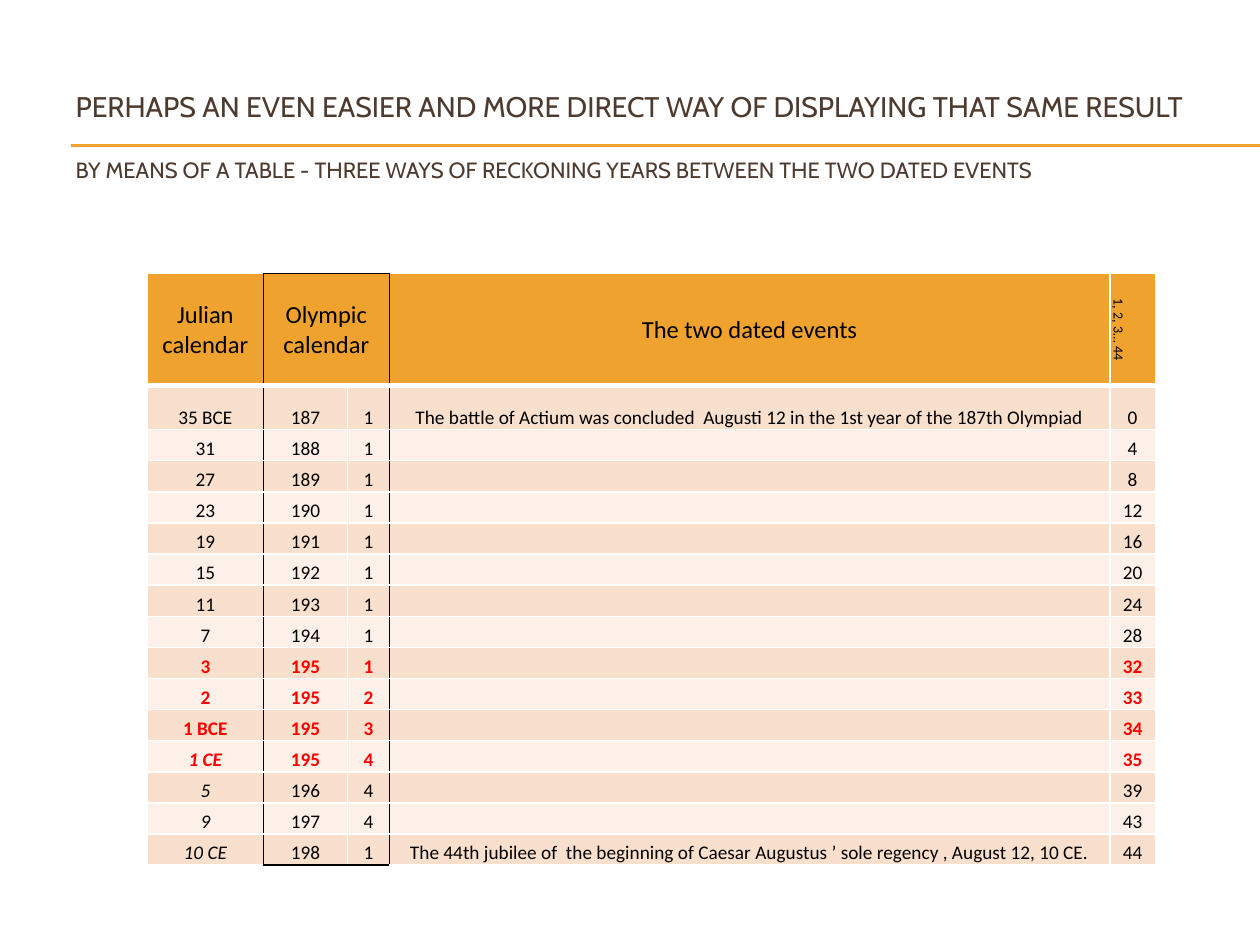
from lxml.etree import SubElement
from pptx import Presentation
from pptx.dml.color import RGBColor
from pptx.enum.shapes import MSO_CONNECTOR as Line
from pptx.enum.text import MSO_ANCHOR as Anchor, PP_ALIGN as Align
from pptx.oxml.ns import qn
from pptx.util import Inches, Pt

HUES = {"gold": "F0A22E", "brown": "4E3B30", "black": "000000", "white": "FFFFFF",
        "red": "FF0000", "dark": "F9E0CD", "light": "FCF0E8"}

TITLE = [
    ("PERHAPS AN EVEN EASIER AND MORE DIRECT WAY OF DISPLAYING THAT SAME RESULT", 16.2, 0),
    ("BY MEANS OF A TABLE - THREE WAYS OF RECKONING YEARS BETWEEN THE TWO DATED EVENTS", 12.6, 19),
]
HEAD = ["Julian calendar", "Olympic calendar", "", "The two dated events", "1, 2, 3… 44"]
START = "The battle of Actium was concluded  Augusti 12 in the 1st year of the 187th Olympiad"
END = "The 44th jubilee of  the beginning of Caesar Augustus ’ sole regency , August 12, 10 CE."
# Julian year, Olympiad, year in it, event, years elapsed
YEARS = [
    ("35 BCE", 187, 1, START, 0),
    ("31", 188, 1, "", 4),
    ("27", 189, 1, "", 8),
    ("23", 190, 1, "", 12),
    ("19", 191, 1, "", 16),
    ("15", 192, 1, "", 20),
    ("11", 193, 1, "", 24),
    ("7", 194, 1, "", 28),
    ("3", 195, 1, "", 32),
    ("2", 195, 2, "", 33),
    ("1 BCE", 195, 3, "", 34),
    ("1 CE", 195, 4, "", 35),
    ("5", 196, 4, "", 39),
    ("9", 197, 4, "", 43),
    ("10 CE", 198, 1, END, 44),
]
WIDTHS = [0.92, 0.67, 0.33, 5.72, 0.36]
HEIGHT, TOP_ROW, FIRST_ROW = 4.7, 0.89, 0.35
FIRST_CE = 12  # row where the CE years begin


def hue(name):
    return RGBColor.from_string(HUES[name])


class Deck:
    def __init__(self):
        self.prs = Presentation()
        self.prs.slide_width, self.prs.slide_height = Inches(10), Inches(7.5)
        self.slide = self.prs.slides.add_slide(self.prs.slide_layouts[5])

    def run(self, para, text, size, face, color, bold=False, italic=False):
        run = para.add_run()
        run.text = text
        font = run.font
        font.size, font.name, font.bold, font.italic = Pt(size), face, bold, italic
        font.color.rgb = hue(color)

    def title(self, lines, x, y, w, h):
        box = self.slide.shapes.title
        box.left, box.top, box.width, box.height = map(Inches, (x, y, w, h))
        frame = box.text_frame
        frame.word_wrap, frame.vertical_anchor = True, Anchor.MIDDLE
        frame.margin_left, frame.margin_right = Inches(0.1), 0
        for i, (text, size, gap) in enumerate(lines):
            para = frame.add_paragraph() if i else frame.paragraphs[0]
            para.alignment, para.space_before = Align.LEFT, Pt(gap)
            self.run(para, text, size, "Cabin", "brown")

    def rule(self, x, y, end):
        line = self.slide.shapes.add_connector(
            Line.STRAIGHT, Inches(x), Inches(y), Inches(end), Inches(y))
        line.line.color.rgb, line.line.width = hue("gold"), Pt(0.75)
        SubElement(line._element.spPr, qn("a:effectLst"))

    def table(self, x, y, widths, heights):
        table = self.slide.shapes.add_table(
            len(heights), len(widths), Inches(x), Inches(y),
            Inches(sum(widths)), Inches(sum(heights))).table
        for col, w in zip(table.columns, widths):
            col.width = Inches(w)
        for row, h in zip(table.rows, heights):
            row.height = Inches(h)
        return table

    def edges(self, cell, black, base):
        props = cell._tc.get_or_add_tcPr()
        for side in "LRTB":
            width = base if side == "B" else 1
            line = SubElement(props, qn(f"a:ln{side}"), w=str(Pt(width)))
            fill = SubElement(line, qn("a:solidFill"))
            color = HUES["black" if side in black else "white"]
            SubElement(fill, qn("a:srgbClr"), val=color)

    def cell(self, cell, text, size, fill, anchor, black="", base=1, **style):
        self.edges(cell, black, base)
        cell.fill.solid()
        cell.fill.fore_color.rgb = hue(fill)
        cell.margin_left = cell.margin_right = cell.margin_top = Inches(0.01)
        cell.margin_bottom = 0
        cell.vertical_anchor = anchor
        para = cell.text_frame.paragraphs[0]
        para.alignment = Align.CENTER
        if text:
            self.run(para, text, size, "Calibri", **style)
        else:  # keeps an empty row from growing
            SubElement(para._p, qn("a:endParaRPr"), sz=str(size * 100))


def frame(row, col, last):
    """Black sides of a cell, for the box around the Olympic columns."""
    sides = {0: "R", 1: "L", 2: "R", 3: "L"}.get(col, "")
    if col in (1, 2):
        sides += "T" if row == 0 else "B" if row == last else ""
    return sides


def main():
    deck = Deck()

    # Title and double rule
    deck.title(TITLE, 0.5, 0.58, 9, 1)
    for y in (1.15, 1.16):
        deck.rule(0.56, y, 10)

    # Table grid
    last = len(YEARS)
    step = (HEIGHT - TOP_ROW - FIRST_ROW) / (last - 1)
    grid = deck.table(1.17, 2.17, WIDTHS, [TOP_ROW, FIRST_ROW] + [step] * (last - 1))

    # Header row
    grid.cell(0, 1).merge(grid.cell(0, 2))
    for c, text in enumerate(HEAD):
        side = c == len(HEAD) - 1
        cell = grid.cell(0, c)
        black = "LRT" if c == 1 else frame(0, c, last)
        deck.cell(cell, text, 8 if side else 14, "gold", Anchor.MIDDLE,
                  black, base=3, color="black")
        if side:
            cell._tc.get_or_add_tcPr().set("vert", "vert")

    # Year rows, with the turn of the era in red
    for r, year in enumerate(YEARS, 1):
        turn = year[1] == 195
        for c, value in enumerate(year):
            deck.cell(grid.cell(r, c), str(value), 11, "dark" if r % 2 else "light",
                      Anchor.BOTTOM, frame(r, c, last), color="red" if turn else "black",
                      bold=turn, italic=c == 0 and r >= FIRST_CE)

    deck.prs.save("out.pptx")


if __name__ == "__main__":
    main()
